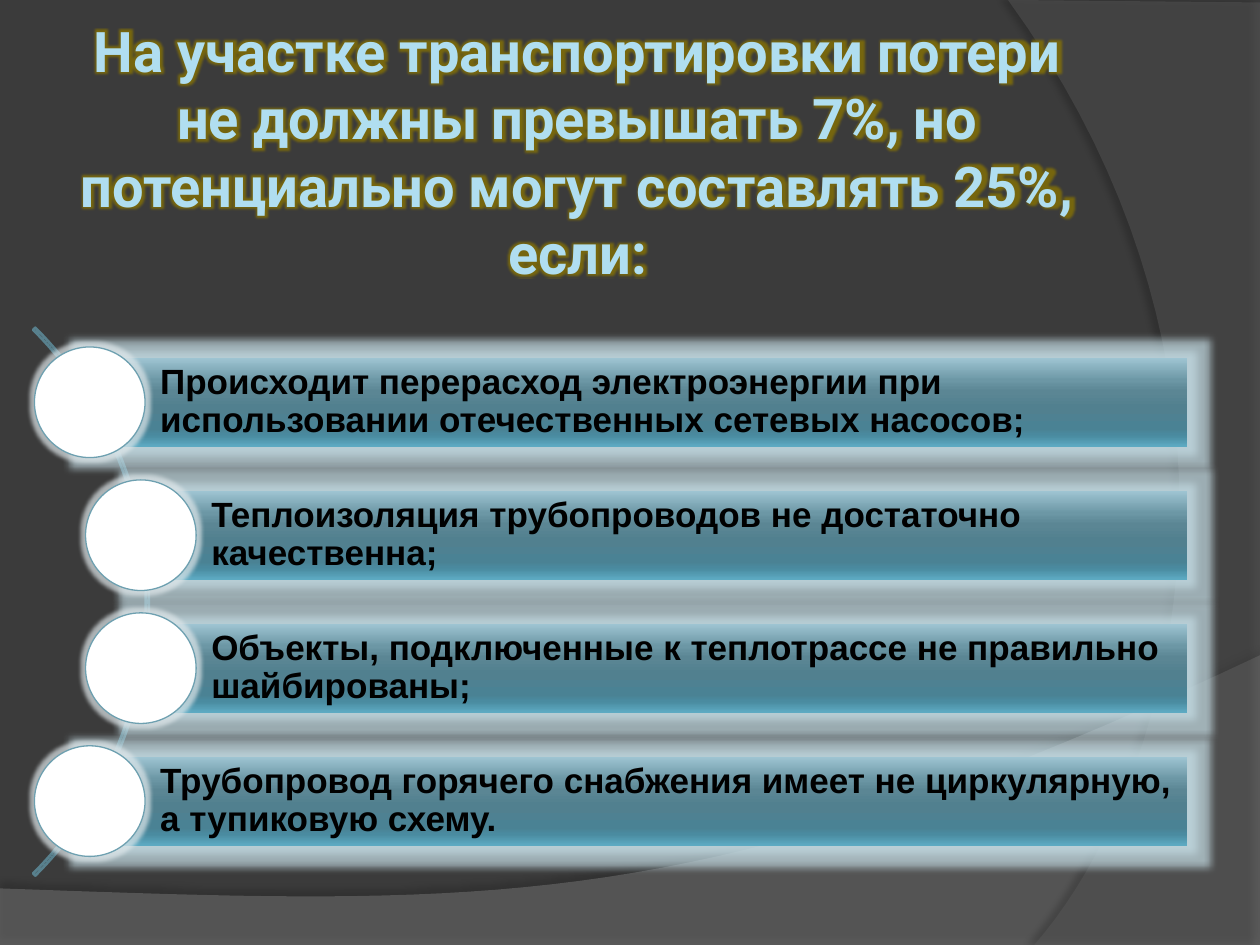
from pptx import Presentation
from pptx.dml.color import RGBColor
from pptx.enum.shapes import MSO_SHAPE
from pptx.enum.text import MSO_ANCHOR, MSO_AUTO_SIZE, PP_ALIGN
from pptx.oxml import parse_xml
from pptx.oxml.ns import nsdecls, qn
from pptx.util import Cm, Pt

TITLE = ("На участке транспортировки потери не должны превышать 7%, "
         "но потенциально могут составлять 25%, если:")
ITEMS = [
    (1.81, "Происходит перерасход электроэнергии при использовании отечественных сетевых насосов;"),
    (2.84, "Теплоизоляция трубопроводов не достаточно качественна;"),
    (2.84, "Объекты, подключенные к теплотрассе не правильно шайбированы;"),
    (1.81, "Трубопровод горячего снабжения имеет не циркулярную, а тупиковую схему."),
]
STOPS = [(0, "9EC4D2"), (25, "6C97A5"), (38, "5B8694"), (55, "51808F"),
         (80, "4A8294"), (88, "4A8BA0"), (100, "5DAAC2")]
TOP, STEP, HIGH, RIGHT, DISC = 7.22, 2.68, 1.78, 23.94, 2.23


def color(code):
    return RGBColor.from_string(code)


def tint(code, alpha):
    return f'<a:srgbClr val="{code}"><a:alpha val="{alpha * 1000}"/></a:srgbClr>'


def node(tag, attrs, inner):
    return parse_xml(f'<a:{tag} {nsdecls("a")} {attrs}>{inner}</a:{tag}>')


def glow(code, alpha, size):
    return node("glow", f'rad="{Pt(size)}"', tint(code, alpha))


def curve(start, one, two, end, count=40):
    for i in range(1, count + 1):
        t = i / count
        u = 1 - t
        yield tuple(u**3 * a + 3 * u * u * t * b + 3 * u * t * t * c + t**3 * d
                    for a, b, c, d in zip(start, one, two, end))


class Page:
    def __init__(self, deck, back):
        self.slide = deck.slides.add_slide(deck.slide_layouts[5])
        self.shapes = self.slide.shapes
        self.slide.background.fill.solid()
        self.slide.background.fill.fore_color.rgb = color(back)

    def paint(self, shape, fill=None, line=None, width=0.75, effect=None):
        if fill:
            shape.fill.solid()
            shape.fill.fore_color.rgb = color(fill)
        else:
            shape.fill.background()
        if line:
            shape.line.color.rgb = color(line)
            shape.line.width = Pt(width)
        else:
            shape.line.fill.background()
        shape.shadow.inherit = False
        if effect is not None:
            shape._element.spPr.find(qn("a:effectLst")).append(effect)

    def preset(self, kind, left, top, width, height):
        return self.shapes.add_shape(kind, Cm(left), Cm(top), Cm(width), Cm(height))

    def label(self, shape, text, font, size, code, align, pads):
        frame = shape.text_frame
        frame.text = text
        frame.word_wrap = True
        frame.auto_size = MSO_AUTO_SIZE.NONE
        frame.vertical_anchor = MSO_ANCHOR.MIDDLE
        frame.margin_left = Cm(pads[0])
        frame.margin_right = frame.margin_top = frame.margin_bottom = Cm(pads[1])
        line = frame.paragraphs[0]
        line.alignment = align
        run = line.runs[0]
        run.font.name, run.font.size, run.font.bold = font, Pt(size), True
        run.font.color.rgb = color(code)
        return line

    def title(self, text):
        shape = self.shapes.title
        shape.left, shape.top, shape.width, shape.height = Cm(1.27), Cm(0.76), Cm(20.75), Cm(4.57)
        line = self.label(shape, text, "Roboto", 32, "B0DEF0", PP_ALIGN.CENTER, (0.13, 0.13))
        halo = node("effectLst", "", "")
        halo.append(glow("8A7500", 75, 5))
        line.runs[0].font._element.find(qn("a:solidFill")).addnext(halo)
        self.shapes._spTree.append(shape._element)

    def wave(self, edge, bend, fill, alpha, shade, angle):
        points = [(Cm(x), Cm(y)) for x, y in edge + list(curve(edge[-1], *bend))]
        maker = self.shapes.build_freeform(*points[0])
        maker.add_line_segments(points[1:], close=True)
        shape = maker.convert_to_shape()
        attrs = f'blurRad="{Pt(4)}" dist="{Pt(4)}" dir="{angle * 60000}" rotWithShape="0"'
        self.paint(shape, fill, effect=node("outerShdw", attrs, tint("000000", shade)))
        tone = next(shape._element.spPr.iter(qn("a:srgbClr")))
        tone.append(node("alpha", f'val="{alpha * 1000}"', ""))

    def arc(self):
        shape = self.preset(MSO_SHAPE.BLOCK_ARC, -12.62, 4.32, 15.62, 15.62)
        for i, value in enumerate((189, 27, 0.004)):
            shape.adjustments[i] = value
        self.paint(shape, line="58808D", width=1.5)

    def bar(self, left, top, text):
        shape = self.preset(MSO_SHAPE.RECTANGLE, left, top, RIGHT - left, HIGH)
        self.paint(shape, effect=glow("C4DCE4", 70, 9))
        shape.fill.gradient()
        shape.fill.gradient_angle = 270
        stops = next(shape._element.spPr.iter(qn("a:gsLst")))
        for stop in list(stops):
            stops.remove(stop)
        for place, code in STOPS:
            stops.append(node("gs", f'pos="{place * 1000}"', f'<a:srgbClr val="{code}"/>'))
        line = self.label(shape, text, "Arial", 20, "000000", PP_ALIGN.LEFT, (1.42, 0.15))
        line.line_spacing = 0.9

    def disc(self, x, y):
        shape = self.preset(MSO_SHAPE.OVAL, x - DISC / 2, y - DISC / 2, DISC, DISC)
        self.paint(shape, "FFFFFF", "6EA0B0", effect=glow("E0E8EB", 70, 5))


def main():
    deck = Presentation()
    deck.slide_width, deck.slide_height = Cm(25.4), Cm(19.05)
    page = Page(deck, "3B3B3B")
    page.wave([(0, 17.91), (0, 19.07), (25.4, 19.07), (25.4, 13.21)],
              [(14.2, 18.52), (9.93, 18.26), (0, 17.91)], "7F7F7F", 45, 35, 270)
    page.wave([(25.4, 0.05), (25.4, 19.05), (20.85, 19.05)],
              [(23.75, 15.72), (25.86, 7.62), (20.32, 0)], "5E5E5E", 40, 45, 180)
    page.title(TITLE)
    page.arc()
    for i, (left, text) in enumerate(ITEMS):
        top = TOP + i * STEP
        page.bar(left, top, text)
        page.disc(left, top + HIGH / 2)
    deck.save("out.pptx")


if __name__ == "__main__":
    main()
